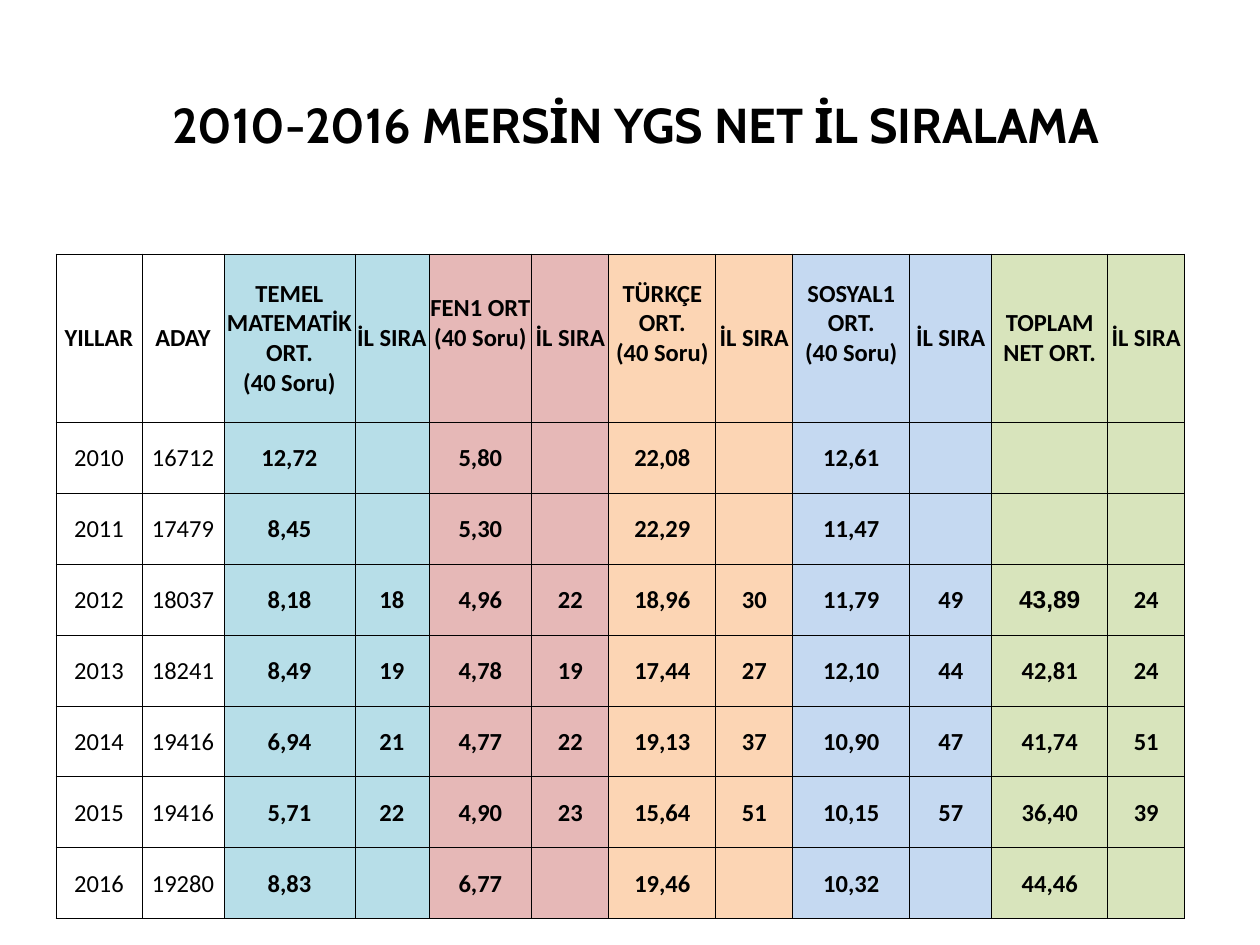
"""Builds a slide with the yearly YGS net averages and province ranks of Mersin."""
from lxml import etree
from pptx import Presentation
from pptx.dml.color import RGBColor
from pptx.enum.text import MSO_ANCHOR as Anchor, MSO_AUTO_SIZE as AutoSize, PP_ALIGN as Align
from pptx.oxml.ns import qn
from pptx.util import Pt

TITLE = "2010-2016 MERSİN YGS NET İL SIRALAMA"
RANK = "İL SIRA"
HEADERS = [
    "YILLAR", "ADAY",
    "TEMEL MATEMATİK ORT.\n(40 Soru)", RANK,
    "FEN1 ORT\n(40 Soru)", RANK,
    "TÜRKÇE ORT.\n(40 Soru)", RANK,
    "SOSYAL1 ORT.\n(40 Soru)", RANK,
    "TOPLAM NET ORT.", RANK,
]
RESULTS = [
    ["2010", "16712", "12,72", "", "5,80", "", "22,08", "", "12,61", "", "", ""],
    ["2011", "17479", "8,45", "", "5,30", "", "22,29", "", "11,47", "", "", ""],
    ["2012", "18037", "8,18", "18", "4,96", "22", "18,96", "30", "11,79", "49", "43,89", "24"],
    ["2013", "18241", "8,49", "19", "4,78", "19", "17,44", "27", "12,10", "44", "42,81", "24"],
    ["2014", "19416", "6,94", "21", "4,77", "22", "19,13", "37", "10,90", "47", "41,74", "51"],
    ["2015", "19416", "5,71", "22", "4,90", "23", "15,64", "51", "10,15", "57", "36,40", "39"],
    ["2016", "19280", "8,83", "", "6,77", "", "19,46", "", "10,32", "", "44,46", ""],
]
BLACK = RGBColor(0x00, 0x00, 0x00)
TEAL = RGBColor(0xB7, 0xDE, 0xE8)
ROSE = RGBColor(0xE6, 0xB8, 0xB7)
PEACH = RGBColor(0xFC, 0xD5, 0xB4)
BLUE = RGBColor(0xC5, 0xD9, 0xF1)
GREEN = RGBColor(0xD8, 0xE4, 0xBC)
PAIR_FILLS = [None, TEAL, ROSE, PEACH, BLUE, GREEN]
COL_WIDTHS = [86, 82, 131, 74, 103, 77, 107, 77, 117, 82, 116, 77]
HEADER_HEIGHT, ROW_HEIGHT = 168, 71
RAISED_COLS = (4, 6, 8)
ARIAL_CELL = (3, 10)


def px(n):
    return round(n * 914400 / 126)


def write(tf, text, size=14, font="Calibri", bold=True):
    for i, line in enumerate(text.split("\n")):
        p = tf.add_paragraph() if i else tf.paragraphs[0]
        p.alignment = Align.CENTER
        r = p.add_run()
        r.text = line
        r.font.size, r.font.name, r.font.bold = Pt(size), font, bold
        r.font.color.rgb = BLACK


def add_borders(cell):
    tc_pr = cell._tc.get_or_add_tcPr()
    for i, side in enumerate("LRTB"):
        ln = etree.Element(qn(f"a:ln{side}"), w=str(Pt(0.5)))
        fill = etree.SubElement(ln, qn("a:solidFill"))
        etree.SubElement(fill, qn("a:srgbClr"), val=str(BLACK))
        tc_pr.insert(i, ln)


def add_title(slide):
    sp = slide.shapes.title
    sp.left, sp.top, sp.width, sp.height = px(74), px(88), px(1123), px(72)
    tf = sp.text_frame
    tf.word_wrap, tf.auto_size = True, AutoSize.SHAPE_TO_FIT_TEXT
    tf.vertical_anchor = Anchor.MIDDLE
    write(tf, TITLE, size=28, font="Cabin")


def add_results(slide):
    rows = [HEADERS] + RESULTS
    heights = [HEADER_HEIGHT] + [ROW_HEIGHT] * len(RESULTS)
    table = slide.shapes.add_table(len(rows), len(HEADERS), px(56), px(254),
                                   px(sum(COL_WIDTHS)), px(sum(heights))).table
    table.first_row = table.horz_banding = False
    for col, width in zip(table.columns, COL_WIDTHS):
        col.width = px(width)
    for i, (values, height) in enumerate(zip(rows, heights)):
        table.rows[i].height = px(height)
        for j, value in enumerate(values):
            cell = table.cell(i, j)
            cell.vertical_anchor = Anchor.MIDDLE
            cell.margin_left = cell.margin_right = cell.margin_top = px(1)
            cell.margin_bottom = px(30) if i == 0 and j in RAISED_COLS else 0
            color = PAIR_FILLS[j // 2]
            if color is None:
                cell.fill.background()
            else:
                cell.fill.solid()
                cell.fill.fore_color.rgb = color
            add_borders(cell)
            if value:
                write(cell.text_frame, value, bold=i == 0 or j > 1,
                      font="Arial" if (i, j) == ARIAL_CELL else "Calibri")


def main():
    prs = Presentation()
    prs.slide_width, prs.slide_height = px(1260), px(945)
    slide = prs.slides.add_slide(prs.slide_layouts[5])
    add_title(slide)
    add_results(slide)
    prs.save("out.pptx")


if __name__ == "__main__":
    main()
